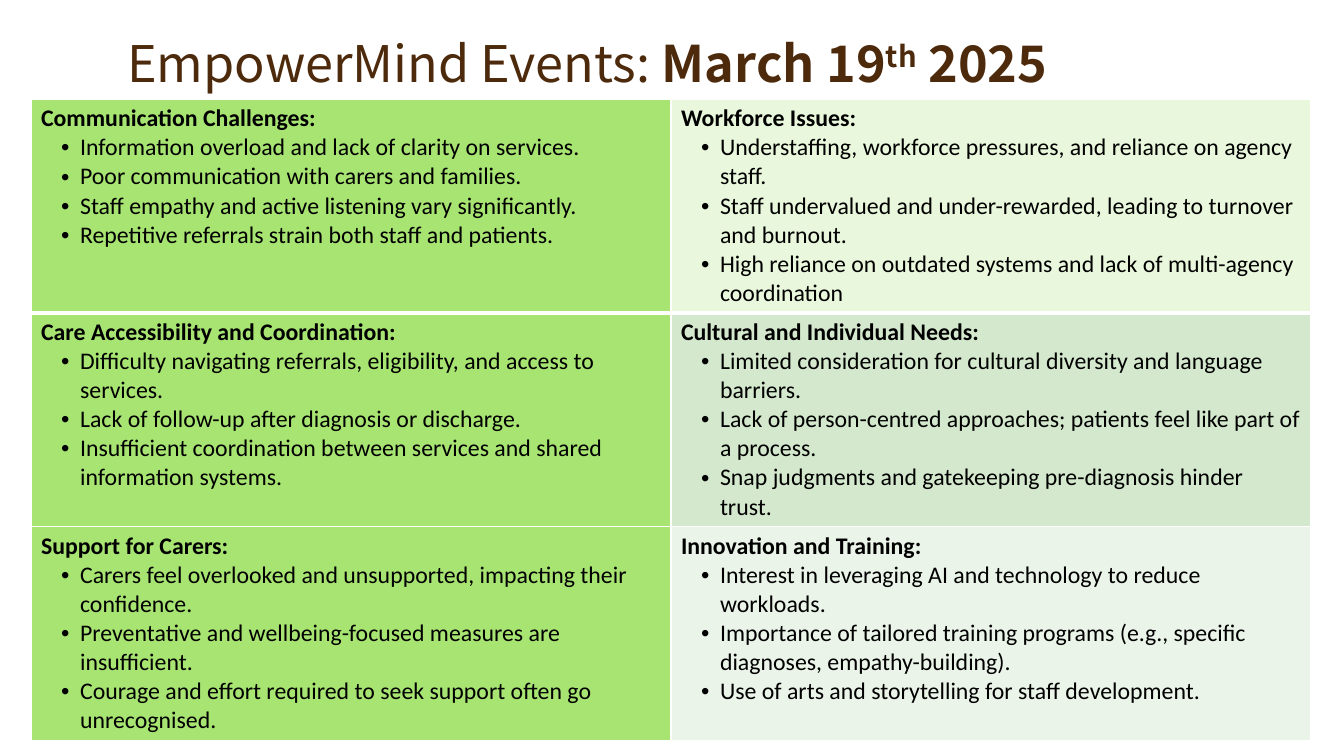
import lxml.etree
import pptx
import pptx.dml.color
import pptx.enum.text
import pptx.oxml.ns
import pptx.util

SCALE = 914400 / 100.8

THEME = {
    "title_font": "Noto Sans CJK TC",
    "body_font": "Calibri",
    "title_size": 36,
    "body_size": 17,
    "title": "4D2A0B",
    "body": "000000",
    "border": "FFFFFF",
    "left": "A7E472",
    "right": ["E9F8DC", "D4E8CD", "EBF4E8"],
}

TOPICS = [
    [
        ("Communication Challenges:", [
            "Information overload and lack of clarity on services.",
            "Poor communication with carers and families.",
            "Staff empathy and active listening vary significantly.",
            "Repetitive referrals strain both staff and patients.",
        ]),
        ("Workforce Issues:", [
            "Understaffing, workforce pressures, and reliance on agency staff.",
            "Staff undervalued and under-rewarded, leading to turnover and burnout.",
            "High reliance on outdated systems and lack of multi-agency coordination",
        ]),
    ],
    [
        ("Care Accessibility and Coordination:", [
            "Difficulty navigating referrals, eligibility, and access to services.",
            "Lack of follow-up after diagnosis or discharge.",
            "Insufficient coordination between services and shared information systems.",
        ]),
        ("Cultural and Individual Needs:", [
            "Limited consideration for cultural diversity and language barriers.",
            "Lack of person-centred approaches; patients feel like part of a process.",
            "Snap judgments and gatekeeping pre-diagnosis hinder trust.",
        ]),
    ],
    [
        ("Support for Carers:", [
            "Carers feel overlooked and unsupported, impacting their confidence.",
            "Preventative and wellbeing-focused measures are insufficient.",
            "Courage and effort required to seek support often go unrecognised.",
        ]),
        ("Innovation and Training:", [
            "Interest in leveraging AI and technology to reduce workloads.",
            "Importance of tailored training programs (e.g., specific diagnoses, empathy-building).",
            "Use of arts and storytelling for staff development.",
        ]),
    ],
]


def px(length):
    return pptx.util.Emu(round(length * SCALE))


def add_text(para, text, role="body", bold=False, raised=0, bullet=False):
    if bullet:
        properties = para._p.get_or_add_pPr()
        properties.set("marL", str(px(39)))
        properties.set("indent", str(-px(19)))
        para.level = 1
        for tag, key, value in [("buFont", "typeface", "Arial"), ("buChar", "char", "•")]:
            element = lxml.etree.SubElement(properties, pptx.oxml.ns.qn("a:" + tag))
            element.set(key, value)
    span = para.add_run()
    span.text = text
    span.font.name = THEME[role + "_font"]
    span.font.size = pptx.util.Pt(THEME[role + "_size"])
    span.font.bold = bold
    span.font.color.rgb = pptx.dml.color.RGBColor.from_string(THEME[role])
    if raised:
        span._r.get_or_add_rPr().set("baseline", str(raised * 1000))


deck = pptx.Presentation()
deck.slide_width, deck.slide_height = px(1344), px(756)
page = deck.slides.add_slide(deck.slide_layouts[5])

title = page.shapes.title
title.left, title.top, title.width, title.height = px(117), px(12), px(1109), px(87)
title.text_frame.auto_size = pptx.enum.text.MSO_AUTO_SIZE.NONE
title.text_frame.vertical_anchor = pptx.enum.text.MSO_ANCHOR.BOTTOM
heading = title.text_frame.paragraphs[0]
heading.alignment = pptx.enum.text.PP_ALIGN.LEFT
heading.line_spacing = 0.9
add_text(heading, "EmpowerMind Events: ", role="title")
add_text(heading, "March 19", role="title", bold=True)
add_text(heading, "th", role="title", bold=True, raised=30)
add_text(heading, " 2025", role="title", bold=True)

frame = page.shapes.add_table(3, 2, px(31), px(99), px(1280), px(639))
table = frame.table
table.first_row = False
table.horz_banding = False
for column in table.columns:
    column.width = px(640)

for row_index, topics in enumerate(TOPICS):
    table.rows[row_index].height = px(213)
    for column_index, (topic, points) in enumerate(topics):
        cell = table.cell(row_index, column_index)
        borders = {"lnL": 1, "lnR": 1, "lnT": 3 if row_index == 1 else 1,
                   "lnB": 3 if row_index == 0 else 1}
        for side, weight in borders.items():
            line = lxml.etree.SubElement(cell._tc.get_or_add_tcPr(), pptx.oxml.ns.qn("a:" + side))
            line.set("w", str(pptx.util.Pt(weight)))
            solid = lxml.etree.SubElement(line, pptx.oxml.ns.qn("a:solidFill"))
            color = lxml.etree.SubElement(solid, pptx.oxml.ns.qn("a:srgbClr"))
            color.set("val", THEME["border"])
        cell.fill.solid()
        shade = THEME["right"][row_index] if column_index else THEME["left"]
        cell.fill.fore_color.rgb = pptx.dml.color.RGBColor.from_string(shade)
        add_text(cell.text_frame.paragraphs[0], topic, bold=True)
        for point in points:
            add_text(cell.text_frame.add_paragraph(), point, bullet=True)

deck.save("out.pptx")
